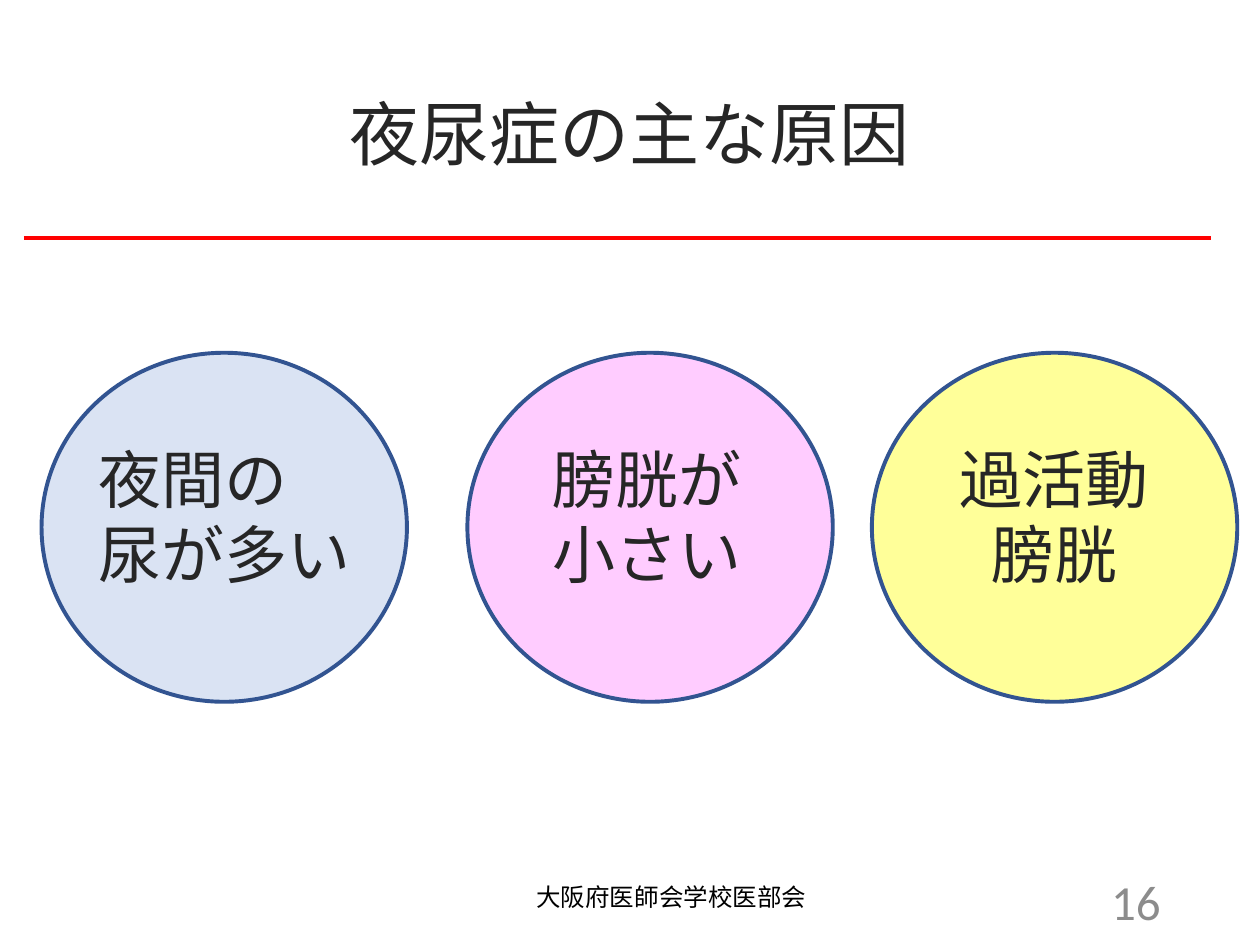
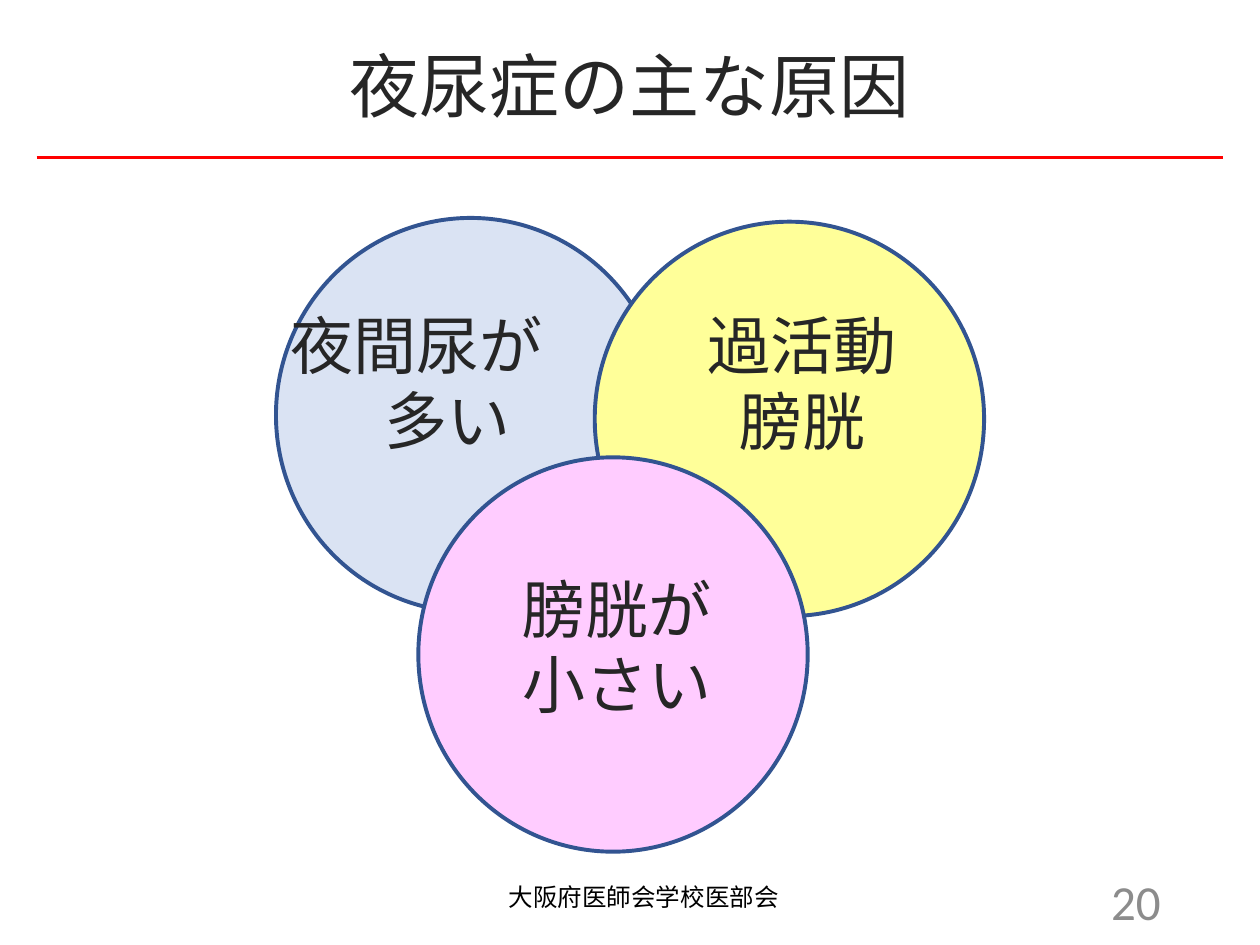
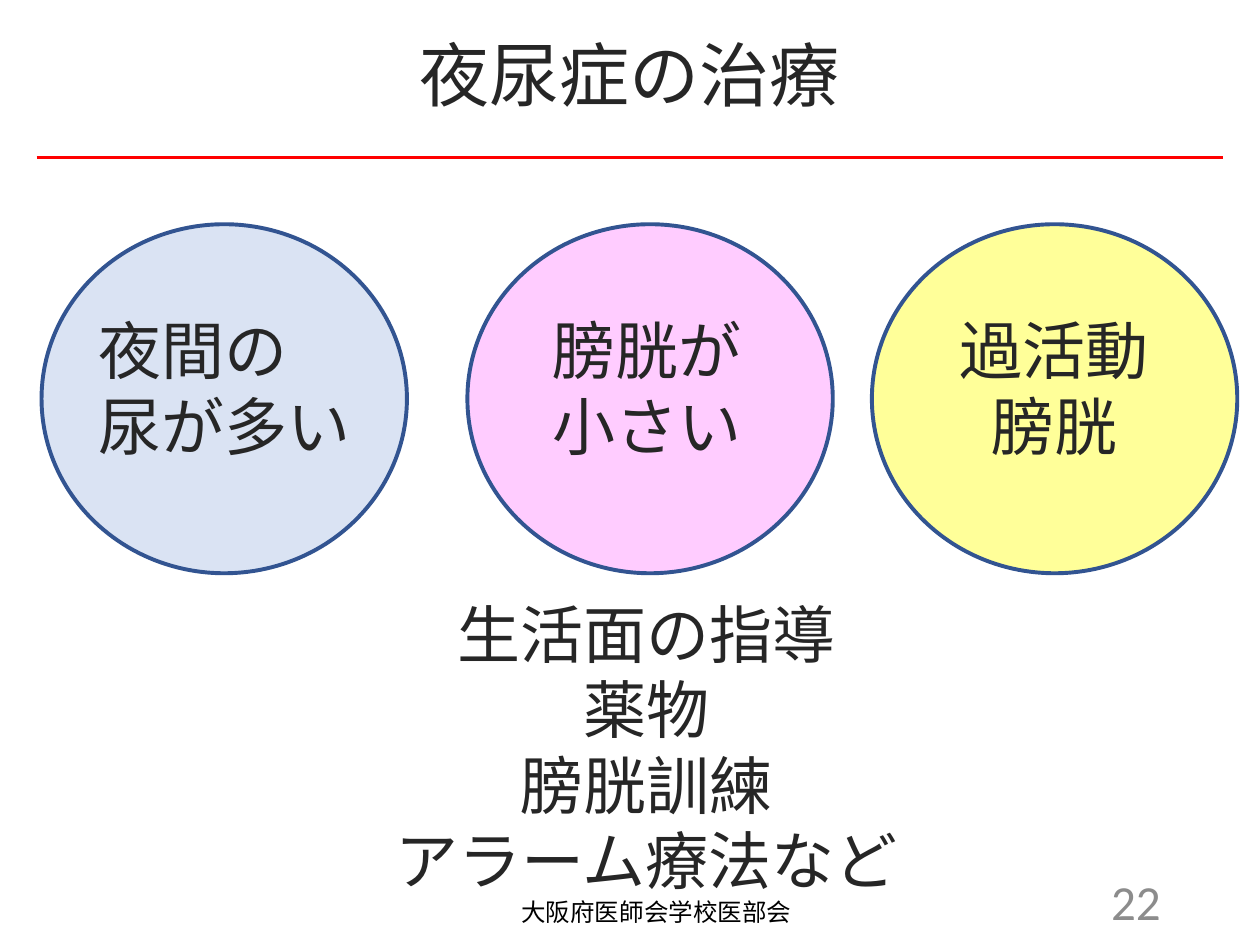
from lxml.etree import SubElement
from pptx import Presentation
from pptx.dml.color import RGBColor
from pptx.enum.shapes import MSO_CONNECTOR as Link, MSO_SHAPE as Form
from pptx.enum.text import MSO_ANCHOR as Anchor, MSO_AUTO_SIZE as Fit, PP_ALIGN as Align
from pptx.oxml.ns import qn
from pptx.util import Inches, Pt

# Slide and grid: 10 columns by 7.5 rows of square cells
WIDE, HIGH = Inches(10), Inches(7.5)
COL, ROW = WIDE / 10, HIGH / 7.5

# Shared look
INK, BLACK, GREY = "262626", "000000", "8C8C8C"
RED, EDGE = "FF0000", "325491"
BLUE, PINK, YELLOW = "DAE3F3", "FFCCFF", "FFFF99"
SANS = "Noto Sans CJK JP"
RULE = 9.42  # length of the red line
GROUP = "大阪府医師会学校医部会"

# Circle colour, label lines and label size for each cause
SMALL = (PINK, ["膀胱が", "小さい"], (3.29, 1.69))
ACTIVE = (YELLOW, ["過活動", "膀胱"], (3.29, 1.69))
NIGHT = (BLUE, ["夜間の　尿が多い"], (2.62, 1.99))
NIGHT_MIX = (BLUE, ["夜間尿が　多い"], (2.91, 2.74))


def hue(code):
    return RGBColor.from_string(code)


def cells(x, y, w, h):
    return [int(n) for n in (x * COL, y * ROW, w * COL, h * ROW)]


def place(shape, spot):
    shape.left, shape.top, shape.width, shape.height = cells(*spot)


def write(shape, lines, size, font=SANS, color=INK, align=Align.CENTER,
          anchor=Anchor.MIDDLE, pitch=None):
    frame = shape.text_frame
    frame.word_wrap = True
    frame.auto_size = Fit.NONE
    frame.vertical_anchor = anchor
    for i, line in enumerate(lines):
        para = frame.add_paragraph() if i else frame.paragraphs[0]
        para.alignment = align
        para.space_before = Pt(0)
        if pitch:
            para.line_spacing = Pt(pitch)
        run = para.add_run()
        run.text = line
        run.font.size = Pt(size)
        run.font.name = font
        run.font.color.rgb = hue(color)
        SubElement(run.font._element, qn("a:ea")).set("typeface", SANS)


def label(slide, spot, lines, size, **look):
    write(slide.shapes.add_textbox(*cells(*spot)), lines, size, **look)


def rule(slide, x, y):
    left, top, right, _ = cells(x, y, x + RULE, y)
    line = slide.shapes.add_connector(Link.STRAIGHT, left, top, right, top)
    line.line.color.rgb = hue(RED)
    line.line.width = Pt(2.25)
    SubElement(line._element.spPr, qn("a:effectLst"))


def cause(slide, kind, spot, shift):
    """A circle with its label, shifted from the circle's corner."""
    color, lines, size = kind
    disc = slide.shapes.add_shape(Form.OVAL, *cells(*spot))
    disc.shadow.inherit = False
    disc.fill.solid()
    disc.fill.fore_color.rgb = hue(color)
    disc.line.color.rgb = hue(EDGE)
    disc.line.width = Pt(2.25)
    label(slide, (spot[0] + shift[0], spot[1] + shift[1], *size),
          lines, 36, pitch=43)


def trio(slide, top):
    """The three causes side by side."""
    for kind, x, shift in ((SMALL, 3.71, (-0.22, 0.45)),
                           (NIGHT, 0.33, (0.14, 0.3)),
                           (ACTIVE, 6.92, (-0.2, 0.45))):
        cause(slide, kind, (x, top, 2.9, 2.77), shift)


def bullets(slide, spot, lines):
    body = slide.placeholders[1]
    place(body, spot)
    write(body, lines, 36, pitch=43)
    for para in body.text_frame.paragraphs:
        props = para._p.get_or_add_pPr()
        props.set("marL", "0")
        props.set("indent", "0")
        SubElement(props, qn("a:buNone"))


def start(deck, layout, title, top, high, line):
    slide = deck.slides.add_slide(deck.slide_layouts[layout])
    place(slide.shapes.title, (1.68, top, 6.63, high))
    write(slide.shapes.title, [title], 40)
    rule(slide, *line)
    return slide


def footer(slide, number, x, y, w, h):
    label(slide, (7.06, 6.95, 2.25, 0.4), [number], 28, font="Calibri",
          color=GREY, align=Align.RIGHT)
    label(slide, (x, y, w, h), [GROUP], 14, font="Cambria",
          color=BLACK, anchor=Anchor.TOP)


def main():
    deck = Presentation()
    deck.slide_width, deck.slide_height = WIDE, HIGH

    # Main causes, side by side
    slide = start(deck, 5, "夜尿症の主な原因", 0.47, 1.16, (0.19, 1.89))
    trio(slide, 2.8)
    footer(slide, "16", 3.88, 6.95, 2.9, 0.4)

    # Main causes, overlapping
    slide = start(deck, 5, "夜尿症の主な原因", 0.09, 1.16, (0.29, 1.25))
    for kind, x, y, shift in ((NIGHT_MIX, 2.19, 1.73, (-0.09, -0.07)),
                              (ACTIVE, 4.72, 1.76, (0, 0.43)),
                              (SMALL, 3.32, 3.63, (-0.07, 0.65))):
        cause(slide, kind, (x, y, 3.09, 3.13), shift)
    footer(slide, "20", 3.64, 6.95, 2.94, 0.4)

    # Treatment
    slide = start(deck, 1, "夜尿症の治療", 0.12, 0.92, (0.29, 1.25))
    trio(slide, 1.78)
    bullets(slide, (1.68, 4.78, 6.91, 2.29),
            ["生活面の指導", "薬物", "膀胱訓練", "アラーム療法など"])
    footer(slide, "22", 3.84, 7.07, 2.74, 0.28)

    deck.save("out.pptx")


main()
